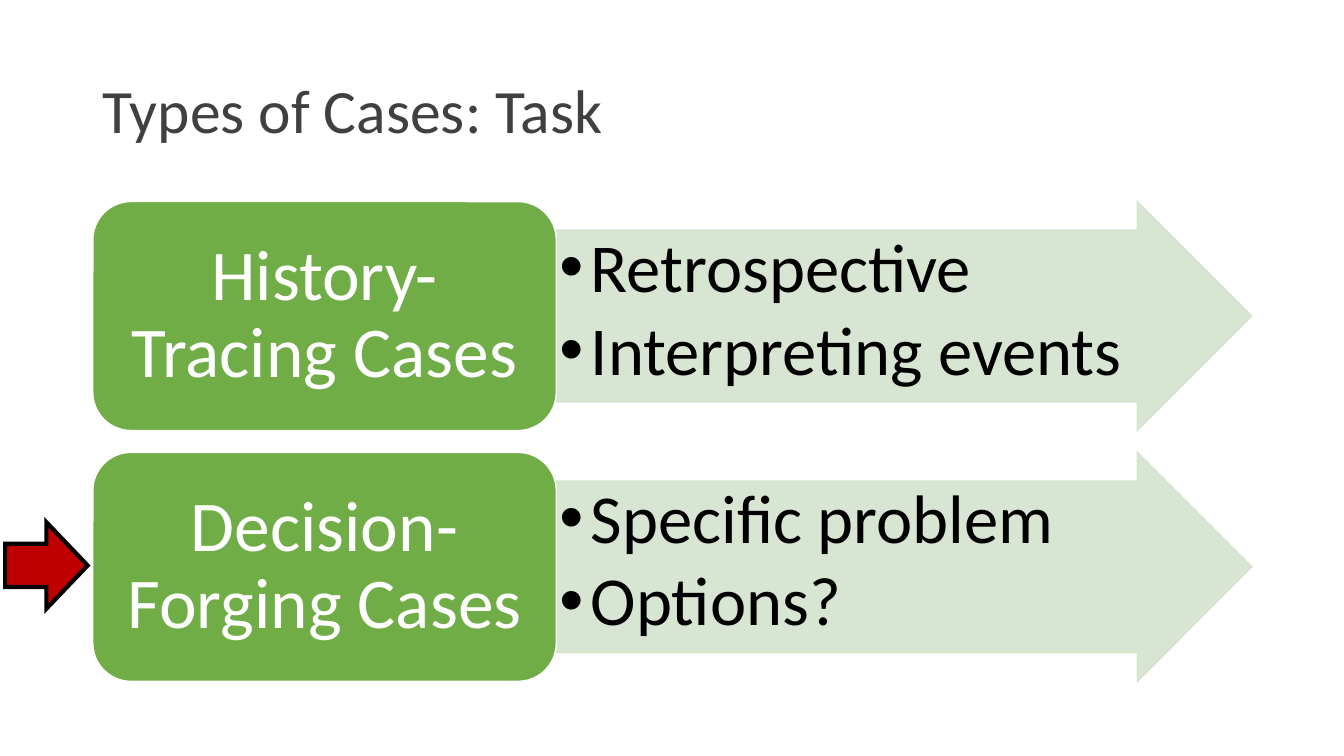
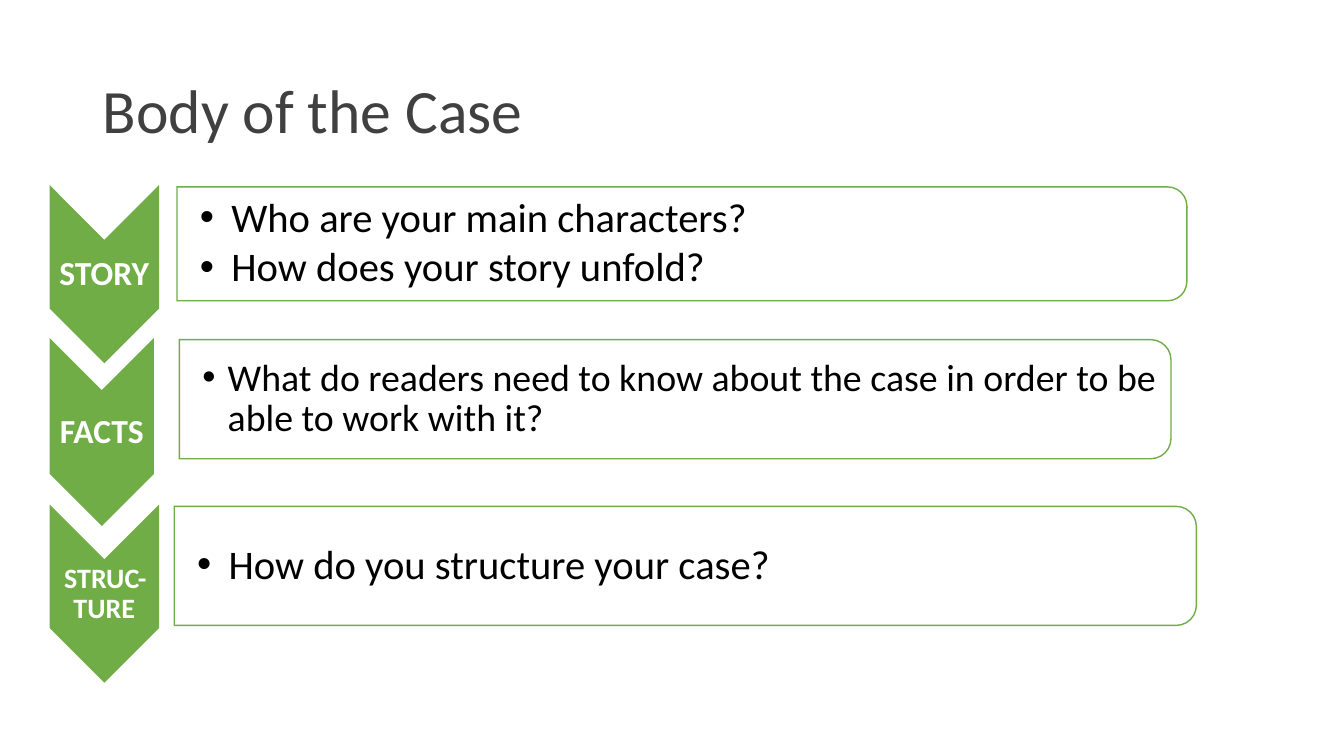
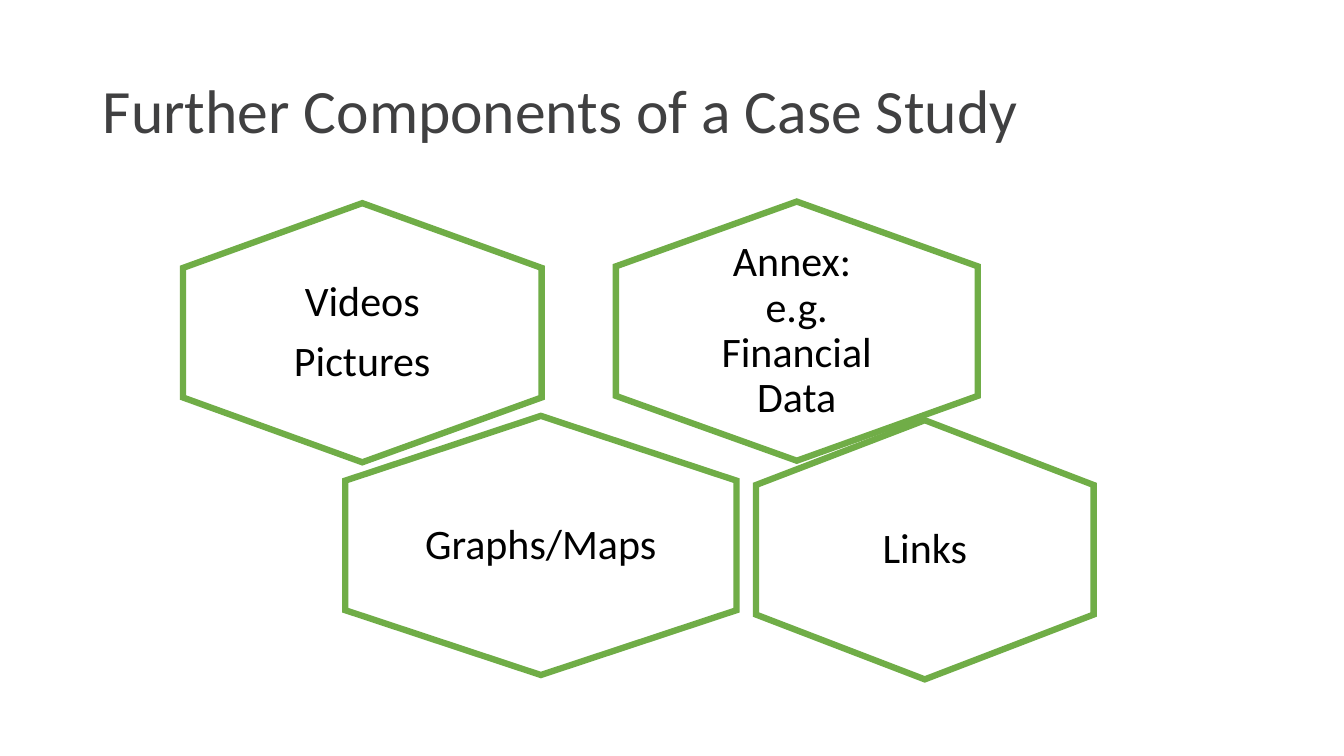
from lxml import etree
from pptx import Presentation
from pptx.dml.color import RGBColor
from pptx.enum import shapes, text
from pptx.oxml.ns import qn
from pptx.util import Cm, Pt

FONT = "Calibri"
GREEN, PALE, RED = "70AD47", "D5E3CF", "C00000"
WHITE, BLACK, GREY = "FFFFFF", "000000", "404041"
SHAPE = shapes.MSO_SHAPE
CENTER, LEFT = text.PP_ALIGN.CENTER, text.PP_ALIGN.LEFT
MIDDLE, TOP = text.MSO_ANCHOR.MIDDLE, text.MSO_ANCHOR.TOP


def rgb(value):
    return RGBColor.from_string(value)


def add_child(parent, tag, **attrs):
    return etree.SubElement(parent, qn(tag), **attrs)


def set_attrs(obj, values):
    for name, value in values.items():
        setattr(obj, name, value)


def set_bullet(p, indent):
    pPr = p._p.get_or_add_pPr()
    pPr.set("marL", str(Cm(indent)))
    pPr.set("indent", str(-Cm(indent)))
    add_child(pPr, "a:buFont", typeface="Arial")
    add_child(pPr, "a:buChar", char="•")


def write(tf, lines, size, color, bold=False, align=CENTER, anchor=MIDDLE,
          insets=(0, 0, 0, 0), after=0.33, indent=None):
    names = ("margin_left", "margin_top", "margin_right", "margin_bottom")
    set_attrs(tf, dict(zip(names, map(Cm, insets))))
    set_attrs(tf, {"word_wrap": True, "vertical_anchor": anchor,
                   "auto_size": text.MSO_AUTO_SIZE.NONE})
    for i, line in enumerate(lines):
        p = tf.add_paragraph() if i else tf.paragraphs[0]
        p.text = line
        if indent:
            set_bullet(p, indent)
        set_attrs(p, {"alignment": align, "line_spacing": 0.9,
                      "space_before": Pt(0), "space_after": Pt(round(size * after))})
        for r in p.runs:
            set_attrs(r.font, {"name": FONT, "size": Pt(size), "bold": bold})
            r.font.color.rgb = rgb(color)


def write_bullets(tf, lines, size, indent, **options):
    write(tf, lines, size, BLACK, align=LEFT, after=0.13, indent=indent, **options)


def add_box(slide, kind, box, fill, line, weight=1, alpha=None):
    sp = slide.shapes.add_shape(kind, *map(Cm, box))
    sp.shadow.inherit = False
    sp.fill.solid()
    sp.fill.fore_color.rgb = rgb(fill)
    sp.line.color.rgb = rgb(line)
    sp.line.width = Pt(weight)
    spPr = sp._element.spPr
    add_child(spPr.find(qn("a:ln")), "a:miter", lim="800000")
    if alpha:
        for clr in spPr.iter(qn("a:srgbClr")):
            add_child(clr, "a:alpha", val=str(alpha * 1000))
    return sp


def add_turned(slide, kind, box, fill, line, weight=1):
    left, top, width, height = box
    shift = (width - height) / 2
    sp = add_box(slide, kind, (left + shift, top - shift, height, width),
                 fill, line, weight)
    sp.rotation = 90
    return sp


def add_text(slide, box):
    return slide.shapes.add_textbox(*map(Cm, box)).text_frame


def add_slide(prs, title):
    slide = prs.slides.add_slide(prs.slide_layouts[5])
    sp = slide.shapes.title
    names = ("left", "top", "width", "height")
    set_attrs(sp, dict(zip(names, map(Cm, (2.34, 1.02, 29.21, 3.68)))))
    write(sp.text_frame, [title], 44, GREY, align=LEFT, after=0,
          insets=(0.25, 0.13, 0.25, 0.13))
    return slide


def add_case_type(slide, top, name, traits):
    arrow = add_box(slide, SHAPE.RIGHT_ARROW, (14.02, top, 17.53, 5.77),
                    PALE, PALE, alpha=90)
    arrow.adjustments[0], arrow.adjustments[1] = 0.75, 0.5
    write_bullets(arrow.text_frame, traits, 49, 0.79, anchor=TOP, insets=[0.08] * 4)
    label = add_box(slide, SHAPE.ROUNDED_RECTANGLE, (2.34, top, 11.68, 5.77),
                    GREEN, WHITE)
    write(label.text_frame, [name], 51, WHITE, insets=(0.53, 0.28, 0.53, 0.28))


def add_case_part(slide, top, name, name_size, chevron, panel, lines, size, indent):
    chevron_box = (1.27, top, *chevron)
    add_turned(slide, SHAPE.CHEVRON, chevron_box, GREEN, GREEN)
    write(add_text(slide, chevron_box), [name], name_size, WHITE, bold=True)
    left, width, height = panel
    panel_box = (left, top, width, height)
    sp = add_turned(slide, SHAPE.ROUND_2_SAME_RECTANGLE, panel_box, WHITE, GREEN)
    sp.adjustments[0] = 0.17
    write_bullets(add_text(slide, panel_box), lines, size, indent,
                  insets=(0.58, 0.05, 0.2, 0.05))


def add_component(slide, left, top, width, lines):
    height = 6.53
    add_turned(slide, SHAPE.HEXAGON, (left, top, width, height), WHITE, GREEN, 4.5)
    box = (left + width / 6, top + height / 6, width * 2 / 3, height * 2 / 3)
    write(add_text(slide, box), lines, 30, BLACK, insets=[0.3] * 4)


def main():
    prs = Presentation()
    prs.slide_width, prs.slide_height = Cm(33.87), Cm(19.05)

    slide = add_slide(prs, "Types of Cases: Task")
    case_types = [
        ("History-Tracing Cases", ["Retrospective", "Interpreting events"]),
        ("Decision-Forging Cases", ["Specific problem", "Options?"]),
    ]
    for i, (name, traits) in enumerate(case_types):
        add_case_type(slide, 5.08 + i * 6.32, name, traits)
    add_box(slide, SHAPE.RIGHT_ARROW, (0.13, 13.16, 2.08, 2.18), RED, BLACK, 3)

    slide = add_slide(prs, "Body of the Case")
    case_parts = [
        (4.71, "STORY", 24, (2.72, 4.42), (4.46, 25.45, 2.87),
         ["Who are your main characters?", "How does your story unfold?"], 29, 0.79),
        (8.56, "FACTS", 24, (2.59, 4.67), (4.52, 24.99, 3),
         ["What do readers need to know about the case in order to be "
          "able to work with it?"], 27, 0.64),
        (12.76, "STRUC-TURE", 20, (2.72, 4.42), (4.39, 25.76, 3),
         ["How do you structure your case?"], 29, 0.79),
    ]
    for part in case_parts:
        add_case_part(slide, *part)

    slide = add_slide(prs, "Further Components of a Case Study")
    components = [
        (15.52, 5.08, 9.12, ["Annex: \ne.g. Financial Data"]),
        (4.61, 5.12, 9.04, ["Videos", "Pictures"]),
        (8.7, 10.48, 9.86, ["Graphs/Maps"]),
        (19.05, 10.59, 8.51, ["Links"]),
    ]
    for component in components:
        add_component(slide, *component)

    prs.save("out.pptx")


if __name__ == "__main__":
    main()
